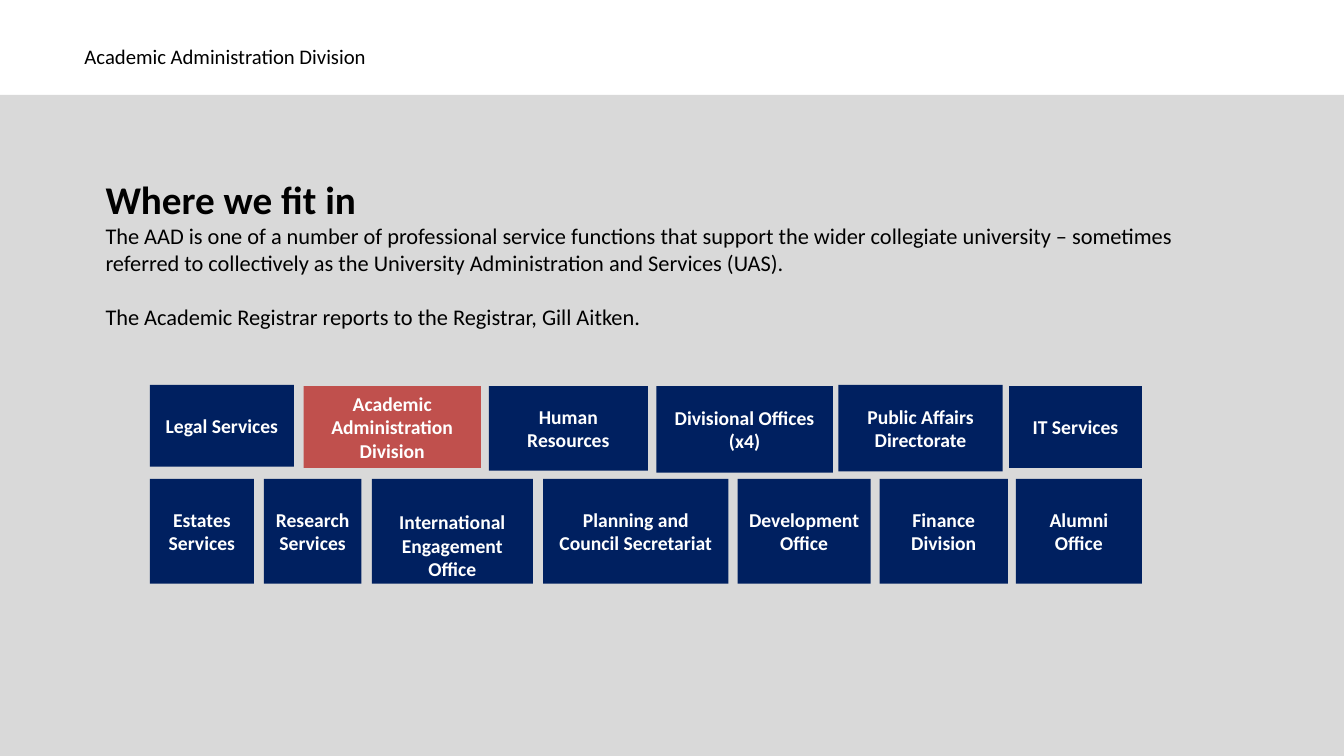
"""Build the slide that shows where the Academic Administration Division fits in."""
from typing import NamedTuple

from pptx import Presentation
from pptx.dml.color import RGBColor
from pptx.enum.shapes import MSO_SHAPE
from pptx.enum.text import MSO_ANCHOR, PP_ALIGN
from pptx.util import Cm, Pt

COLORS = {"panel": "D9D9D9", "navy": "002060", "red": "C0504D",
          "white": "FFFFFF", "black": "000000"}


class Unit(NamedTuple):
    text: str
    left: float
    width: float
    top: float = 12.07
    height: float = 2.64
    fill: str = "navy"
    inset: float = 0.13
    base: float = 0.13


class Line(NamedTuple):
    text: str
    size: float
    bold: bool = False
    before: float = 0


UNITS = [
    Unit("Legal Services", 3.78, 3.63, 9.7, 2.06),
    Unit("Academic Administration Division", 7.65, 4.47, 9.73, 2.06, "red"),
    Unit("Human Resources", 12.32, 4.01, 9.73, 2.13),
    Unit("Divisional Offices (x4)", 16.54, 4.45, 9.73, 2.18),
    Unit("Public Affairs Directorate", 21.13, 4.14, 9.7, 2.18),
    Unit("IT Services", 25.43, 3.35, 9.73, 2.06),
    Unit("Estates Services", 3.78, 2.62),
    Unit("Research Services", 6.65, 2.46),
    Unit("International Engagement\vOffice", 9.37, 4.06, inset=0.71, base=0),
    Unit("Planning and Council Secretariat", 13.69, 4.67),
    Unit("Development Office", 18.59, 3.35),
    Unit("Finance Division", 22.17, 3.23),
    Unit("Alumni Office", 25.6, 3.18),
]

HEADER = [Line("Academic Administration Division", 14.8)]
INTRO = [
    Line("Where we fit in", 28, True),
    Line("The AAD is one of a number of professional service functions that "
         "support the wider collegiate university – sometimes referred to "
         "collectively as the University Administration and Services (UAS).", 16),
    Line("The Academic Registrar reports to the Registrar, Gill Aitken.", 16,
         before=19.5),
]


def style(para, size: float, bold: bool, color: str) -> None:
    for run in para.runs:
        run.font.name = "Calibri"
        run.font.size = Pt(size)
        run.font.bold = bold
        run.font.color.rgb = RGBColor.from_string(COLORS[color])


def add_rect(slide, left: float, top: float, width: float, height: float, fill: str):
    rect = slide.shapes.add_shape(MSO_SHAPE.RECTANGLE, Cm(left), Cm(top),
                                  Cm(width), Cm(height))
    rect.shadow.inherit = False
    rect.fill.solid()
    rect.fill.fore_color.rgb = RGBColor.from_string(COLORS[fill])
    rect.line.fill.background()
    return rect


def add_unit(slide, unit: Unit) -> None:
    rect = add_rect(slide, unit.left, unit.top, unit.width, unit.height, unit.fill)
    frame = rect.text_frame
    frame.word_wrap = True
    frame.vertical_anchor = MSO_ANCHOR.MIDDLE
    frame.margin_top, frame.margin_bottom = Cm(unit.inset), Cm(unit.base)
    para = frame.paragraphs[0]
    para.text = unit.text
    para.alignment = PP_ALIGN.CENTER
    style(para, 14, True, "white")


def add_text(slide, left: float, top: float, width: float, height: float,
             lines: list[Line]) -> None:
    frame = slide.shapes.add_textbox(Cm(left), Cm(top), Cm(width),
                                     Cm(height)).text_frame
    frame.word_wrap = True
    frame.text = "\n".join(line.text for line in lines)
    for para, line in zip(frame.paragraphs, lines):
        if line.before:
            para.space_before = Pt(line.before)
        style(para, line.size, line.bold, "black")


def main() -> None:
    deck = Presentation()
    deck.slide_width, deck.slide_height = Cm(33.87), Cm(19.05)
    slide = deck.slides.add_slide(deck.slide_layouts[6])
    add_text(slide, 1.88, 0.99, 19.76, 0.89, HEADER)
    add_rect(slide, 0, 2.39, 33.87, 16.66, "panel")
    add_text(slide, 2.41, 4.29, 28.19, 4.19, INTRO)
    for unit in UNITS:
        add_unit(slide, unit)
    deck.save("out.pptx")


if __name__ == "__main__":
    main()
